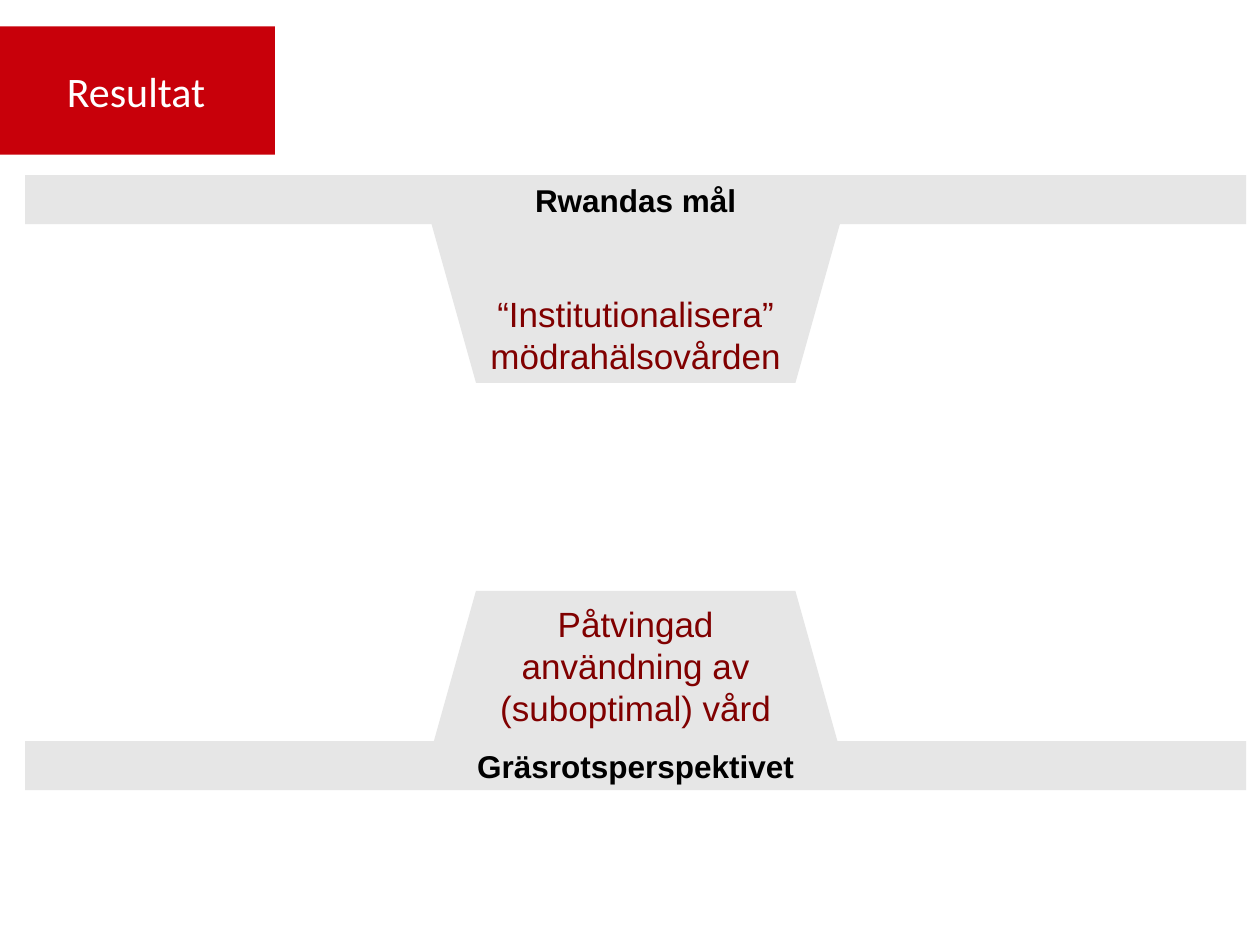
import pptx
import pptx.util
import pptx.dml.color
import pptx.enum.shapes
import pptx.enum.text

Cm = pptx.util.Cm
Kind = pptx.enum.shapes.MSO_SHAPE
Anchor = pptx.enum.text.MSO_ANCHOR

HUES = {"red": "C8000A", "grey": "E6E6E6", "wine": "800000",
        "black": "000000", "white": "FFFFFF"}

TITLE = "Resultat"
# text, top
BARS = [("Rwandas mål", 3.53), ("Gräsrotsperspektivet", 14.94)]
# text, top, turn, text height, anchor
WEDGES = [
    ("Påtvingad användning av (suboptimal) vård", 11.91, 0, 3, Anchor.MIDDLE),
    ("“Institutionalisera” mödrahälsovården", 4.52, 180, 3.2, Anchor.BOTTOM),
]
BAR_LEFT, BAR_WIDE, BAR_HIGH = 0.51, 24.61, 0.99
WEDGE_WIDE, WEDGE_HIGH = 8.23, 3.2
TEXT_WIDE = 7.39
MID = BAR_LEFT + BAR_WIDE / 2


def tint(name):
    return pptx.dml.color.RGBColor.from_string(HUES[name])


def paint(shape, hue):
    shape.fill.solid()
    shape.fill.fore_color.rgb = tint(hue)


def write(shape, text, size, hue, face="Arial", bold=False, anchor=Anchor.MIDDLE):
    frame = shape.text_frame
    frame.word_wrap = True
    frame.auto_size = pptx.enum.text.MSO_AUTO_SIZE.NONE
    frame.vertical_anchor = anchor
    frame.margin_left = frame.margin_right = Cm(0.3)
    para = frame.paragraphs[0]
    para.alignment = pptx.enum.text.PP_ALIGN.CENTER
    run = para.add_run()
    run.text = text
    run.font.size = pptx.util.Pt(size)
    run.font.name = face
    run.font.bold = bold
    run.font.color.rgb = tint(hue)


def add_block(slide, kind, left, top, wide, high):
    shape = slide.shapes.add_shape(kind, Cm(left), Cm(top), Cm(wide), Cm(high))
    shape.shadow.inherit = False
    shape.line.fill.background()
    paint(shape, "grey")
    return shape


def main():
    deck = pptx.Presentation()
    deck.slide_width, deck.slide_height = Cm(25.4), Cm(19.05)
    slide = deck.slides.add_slide(deck.slide_layouts[5])

    title = slide.shapes.title
    title.left, title.top = Cm(-0.05), Cm(0.53)
    title.width, title.height = Cm(5.59), Cm(2.59)
    paint(title, "red")
    write(title, TITLE, 24, "white", face="Calibri")

    for text, top in BARS:
        bar = add_block(slide, Kind.RECTANGLE, BAR_LEFT, top, BAR_WIDE, BAR_HIGH)
        write(bar, text, 18, "black", bold=True)

    for text, top, turn, high, anchor in WEDGES:
        wedge = add_block(slide, Kind.TRAPEZOID, MID - WEDGE_WIDE / 2, top,
                          WEDGE_WIDE, WEDGE_HIGH)
        wedge.adjustments[0] = 0.28
        wedge.rotation = turn
        label = slide.shapes.add_textbox(Cm(MID - TEXT_WIDE / 2), Cm(top),
                                         Cm(TEXT_WIDE), Cm(high))
        write(label, text, 20, "wine", anchor=anchor)

    deck.save("out.pptx")


if __name__ == "__main__":
    main()
